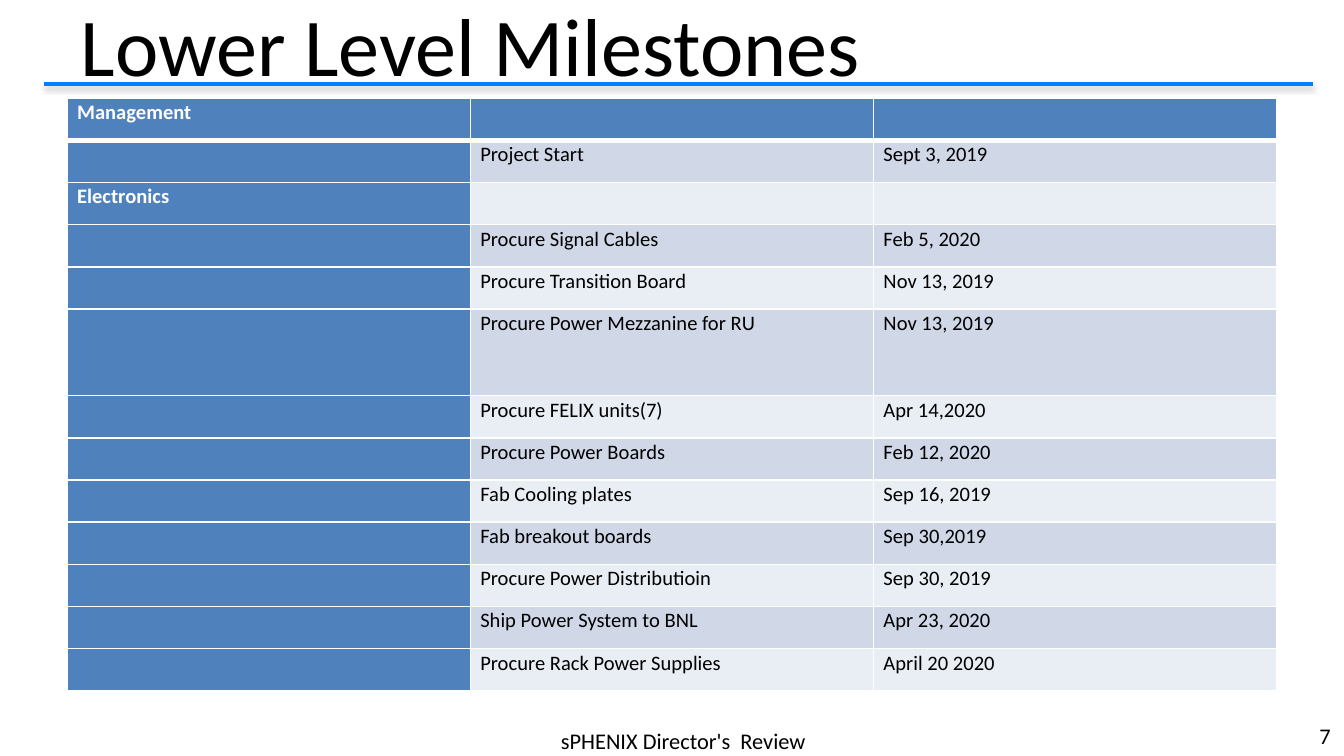
"""Builds the slide that lists the lower level milestones of the project."""
from lxml.etree import SubElement
from pptx import Presentation
from pptx.dml.color import RGBColor
from pptx.enum.shapes import MSO_CONNECTOR as Connector
from pptx.enum.text import MSO_ANCHOR as Anchor, PP_ALIGN as Align
from pptx.oxml import parse_xml
from pptx.oxml.ns import nsdecls, qn
from pptx.util import Inches, Pt

BLACK = RGBColor(0x00, 0x00, 0x00)
WHITE = RGBColor(0xFF, 0xFF, 0xFF)
RULE_BLUE = RGBColor(0x00, 0x80, 0xFF)
HEAD_BLUE = RGBColor(0x4F, 0x81, 0xBD)
BANDS = RGBColor(0xE9, 0xED, 0xF4), RGBColor(0xD0, 0xD8, 0xE8)

TITLE_ONLY = 5
GRID_STEP = 0.1
ROW_HEIGHT = 3.14
TALL_ROW, TALL_HEIGHT = 5, 6.45

MILESTONES = [
    ("Management", "", ""),
    ("", "Project Start", "Sept 3, 2019"),
    ("Electronics", "", ""),
    ("", "Procure Signal Cables", "Feb 5, 2020"),
    ("", "Procure Transition Board", "Nov 13, 2019"),
    ("", "Procure Power Mezzanine for RU", "Nov 13, 2019"),
    ("", "Procure FELIX units(7)", "Apr 14,2020"),
    ("", "Procure Power Boards", "Feb 12, 2020"),
    ("", "Fab Cooling plates", "Sep 16, 2019"),
    ("", "Fab breakout boards", "Sep 30,2019"),
    ("", "Procure Power Distributioin", "Sep 30, 2019"),
    ("", "Ship Power System to BNL", "Apr 23, 2020"),
    ("", "Procure Rack Power Supplies", "April 20 2020"),
]


def grid(*steps):
    """Turn grid columns or rows into lengths."""
    return [Inches(step * GRID_STEP) for step in steps]


def write(frame, text, size=12, color=BLACK, bold=False, font="Calibri",
          align=Align.LEFT, anchor=Anchor.MIDDLE, spacing=None):
    """Write one formatted paragraph into a text frame."""
    frame.vertical_anchor = anchor
    para = frame.paragraphs[0]
    para.alignment = align
    para.line_spacing = spacing
    if not text:
        SubElement(para._p, qn("a:endParaRPr"), sz=str(size * 100))
        return
    span = para.add_run()
    span.text = text
    span.font.name, span.font.size, span.font.bold = font, Pt(size), bold
    span.font.color.rgb = color


class SlideBuilder:
    """Holds the style and the current slide."""

    def __init__(self, deck):
        """Add the slide to the deck."""
        self.slide = deck.slides.add_slide(deck.slide_layouts[TITLE_ONLY])

    def title(self, text, *place):
        """Place and fill the title placeholder."""
        box = self.slide.shapes.title
        box.left, box.top, box.width, box.height = grid(*place)
        write(box.text_frame, text, size=44)

    def label(self, text, *place, **style):
        """Add a text box."""
        box = self.slide.shapes.add_textbox(*grid(*place))
        box.text_frame.word_wrap = True
        write(box.text_frame, text, **style)

    def rule(self, left, right, top):
        """Add a horizontal line with a soft shadow."""
        ends = grid(left, top, right, top)
        line = self.slide.shapes.add_connector(Connector.STRAIGHT, *ends)
        line.line.color.rgb = RULE_BLUE
        line.line.width = Pt(2.25)
        line._element.spPr.append(parse_xml(
            f'<a:effectLst {nsdecls("a")}><a:outerShdw blurRad="{Pt(3.1)}" '
            f'dist="{Pt(1.6)}" dir="5400000" rotWithShape="0">'
            '<a:srgbClr val="808080"><a:alpha val="38000"/></a:srgbClr>'
            '</a:outerShdw></a:effectLst>'))

    def cell(self, cell, text, fill, borders, **style):
        """Fill, outline and write one table cell."""
        properties = cell._tc.get_or_add_tcPr()
        for side, width in borders.items():
            properties.append(parse_xml(
                f'<a:ln{side} {nsdecls("a")} w="{Pt(width)}"><a:solidFill>'
                f'<a:srgbClr val="{WHITE}"/></a:solidFill></a:ln{side}>'))
        cell.fill.solid()
        cell.fill.fore_color.rgb = fill
        cell.margin_left, cell.margin_right = grid(0.74, 0.74)
        cell.margin_top = cell.margin_bottom = 0
        cell.vertical_anchor = Anchor.TOP
        write(cell.text_frame, text, size=11, anchor=None, spacing=1.07, **style)

    def table(self, rows, left, top, width):
        """Add a table with a header row, a header column and banded rows."""
        heights = [TALL_HEIGHT if index == TALL_ROW else ROW_HEIGHT
                   for index in range(len(rows))]
        place = grid(left, top, width, sum(heights))
        table = self.slide.shapes.add_table(len(rows), len(rows[0]), *place).table
        table.first_col = True
        for row, (texts, height) in enumerate(zip(rows, heights)):
            table.rows[row].height = grid(height)[0]
            borders = {"L": 1, "R": 1, "T": 3 if row == 1 else 1,
                       "B": 3 if row == 0 else 1}
            for column, text in enumerate(texts):
                head = row == 0 or column == 0
                self.cell(table.cell(row, column), text,
                          HEAD_BLUE if head else BANDS[row % 2], borders,
                          color=WHITE if head else BLACK, bold=head)


def main():
    """Build and save the deck."""
    deck = Presentation()
    deck.slide_width, deck.slide_height = grid(100, 56.25)
    page = SlideBuilder(deck)
    page.rule(3.3, 97.7, 6.25)
    page.title("Lower Level Milestones", 5, 0.25, 90, 6)
    page.label("sPHENIX Director's  Review", 35, 53.87, 31.7, 2.4, align=Align.CENTER)
    page.label("7", 94.2, 53.25, 5.8, 3, align=Align.RIGHT)
    page.table(MILESTONES, 5, 7.3, 90)
    deck.save("out.pptx")


if __name__ == "__main__":
    main()
